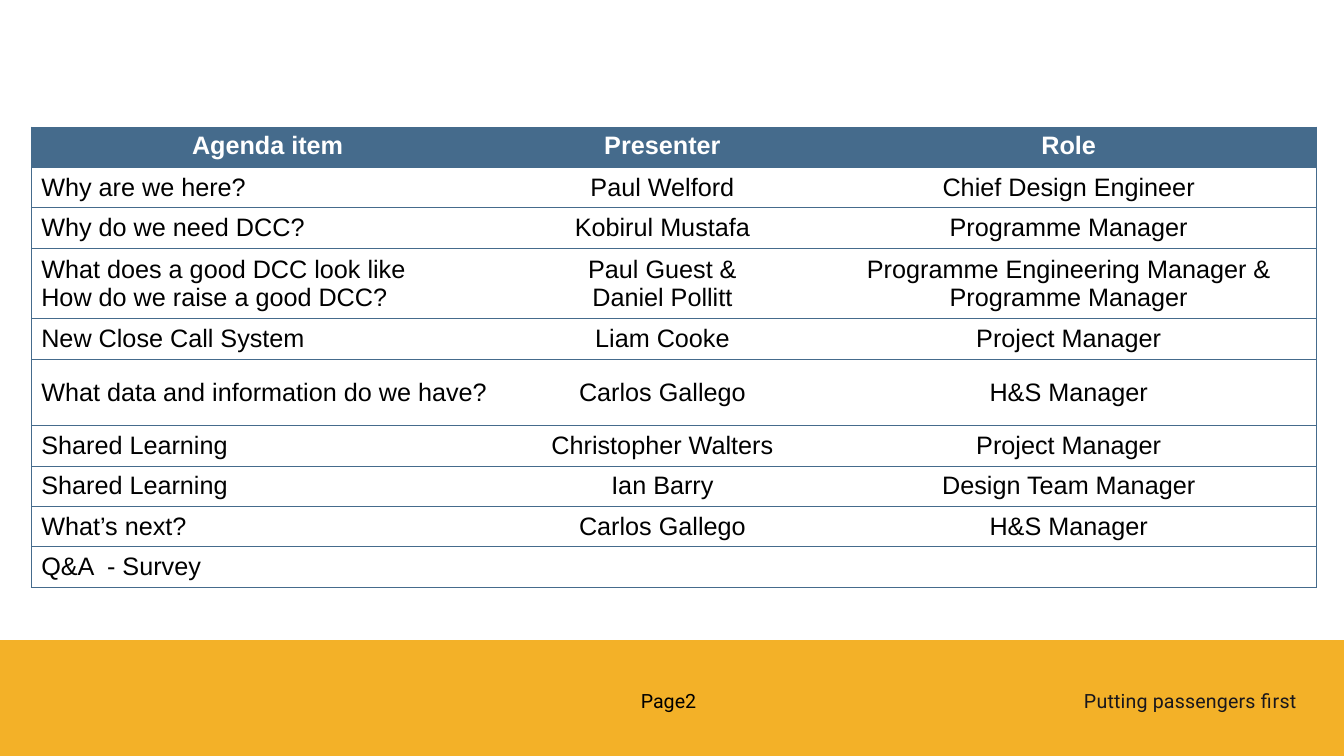
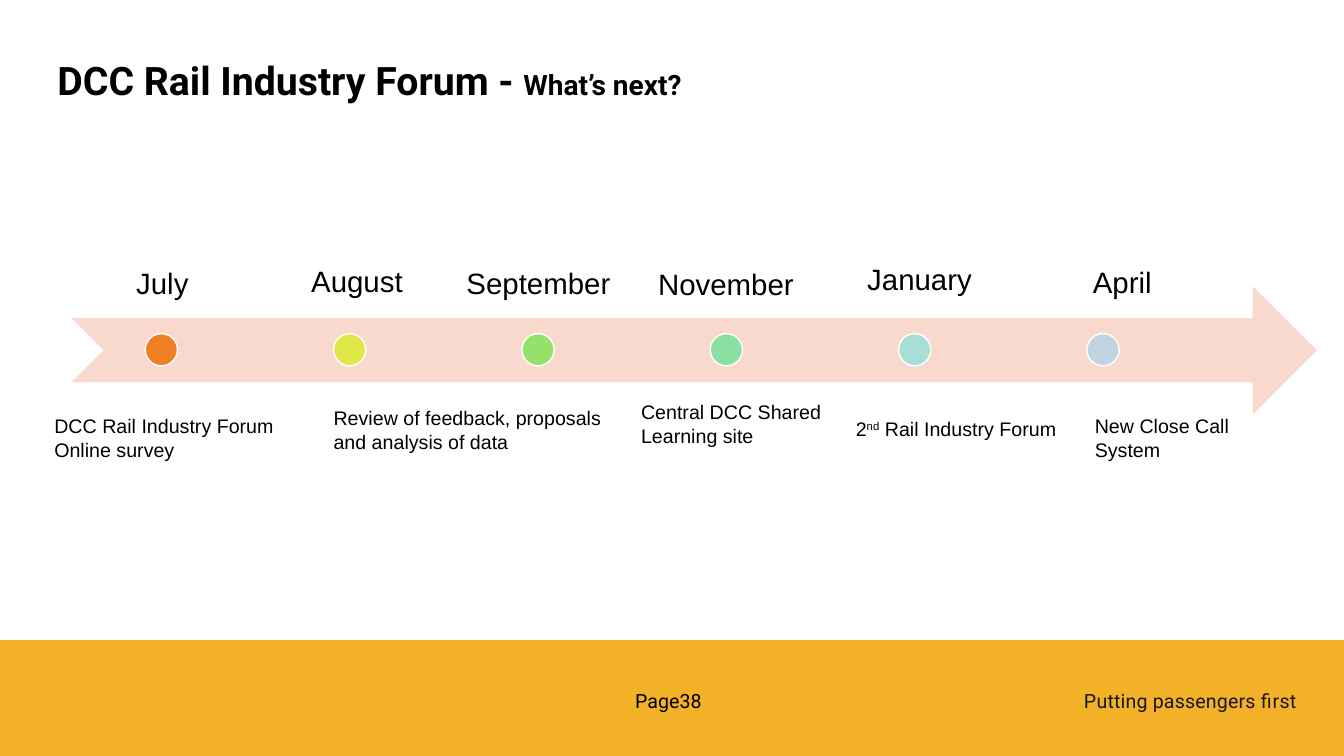
from dataclasses import dataclass

import lxml.etree
import pptx
import pptx.dml.color
import pptx.enum.shapes
import pptx.enum.text
import pptx.oxml.ns
import pptx.util

Inches = pptx.util.Inches
RGB = pptx.dml.color.RGBColor
Align = pptx.enum.text.PP_ALIGN
Anchor = pptx.enum.text.MSO_ANCHOR
Preset = pptx.enum.shapes.MSO_SHAPE

BLACK = RGB(0x00, 0x00, 0x00)
WHITE = RGB(0xFF, 0xFF, 0xFF)
INK = RGB(0x19, 0x17, 0x1C)
AMBER = RGB(0xF3, 0xB1, 0x28)
STEEL = RGB(0x45, 0x6B, 0x8C)
BLUSH = RGB(0xF9, 0xD8, 0xCD)


@dataclass
class Style:
    size: float
    name: str = "Arial"
    color: RGB = BLACK
    bold: bool = False
    align: Align = Align.LEFT
    anchor: Anchor = Anchor.TOP
    space: float = 1.0


@dataclass
class Month:
    name: str
    left: float
    top: float
    color: RGB


@dataclass
class Note:
    text: str
    left: float
    top: float
    width: float
    height: float = 0.57


PAGE = Style(14, "Roboto", align=Align.CENTER, anchor=Anchor.MIDDLE)
MOTTO = Style(14, "Roboto", INK, align=Align.RIGHT, anchor=Anchor.MIDDLE)
TITLE = Style(28, "Roboto", bold=True, space=0.9)
HEAD = Style(18, color=WHITE, bold=True, align=Align.CENTER)
ITEM = Style(18, anchor=Anchor.MIDDLE)
CELL = Style(18, align=Align.CENTER, anchor=Anchor.MIDDLE)
LABEL = Style(21, align=Align.CENTER, space=0.9)
NOTE = Style(14)

COLS = (4.69, 3.14, 4.92)
TALL = {3: 0.7, 5: 0.66}
AGENDA = [
    ("Agenda item", "Presenter", "Role"),
    ("Why are we here?", "Paul Welford", "Chief Design Engineer"),
    ("Why do we need DCC?", "Kobirul Mustafa", "Programme Manager"),
    ("What does a good DCC look like\nHow do we raise a good DCC?",
     "Paul Guest &\nDaniel Pollitt",
     "Programme Engineering Manager & Programme Manager"),
    ("New Close Call System", "Liam Cooke", "Project Manager"),
    ("What data and information do we have?", "Carlos Gallego", "H&S Manager"),
    ("Shared Learning", "Christopher Walters", "Project Manager"),
    ("Shared Learning", "Ian Barry", "Design Team Manager"),
    ("What’s next?", "Carlos Gallego", "H&S Manager"),
    ("Q&A  - Survey", "", ""),
]

MONTHS = [
    Month("July", 0.72, 2.51, RGB(0xF0, 0x7E, 0x23)),
    Month("August", 2.65, 2.49, RGB(0xDF, 0xE7, 0x49)),
    Month("September", 4.45, 2.51, RGB(0x95, 0xE1, 0x6C)),
    Month("November", 6.31, 2.52, RGB(0x8C, 0xDE, 0xA1)),
    Month("January", 8.23, 2.47, RGB(0xA9, 0xDE, 0xD7)),
    Month("April", 10.24, 2.5, RGB(0xC3, 0xD3, 0xE1)),
]
FIRST, LAST, DOT = 1.44, 10.78, 0.32

NOTES = [
    Note("DCC Rail Industry Forum\nOnline survey", 0.44, 4.06, 2.49),
    Note("Review of feedback, proposals and analysis of data", 3.21, 3.98, 3.18),
    Note("Central DCC Shared Learning site", 6.26, 3.92, 2.24),
    Note("New Close Call System", 10.76, 4.06, 1.81),
]
RALLY = Note("2", 8.39, 4.09, 2.24, 0.34)


def set_font(run, style: Style) -> None:
    font = run.font
    font.size = pptx.util.Pt(style.size)
    font.name = style.name
    font.bold = style.bold
    font.color.rgb = style.color


def set_text(frame, text: str, style: Style) -> None:
    frame.text = text
    for para in frame.paragraphs:
        para.alignment = style.align
        para.line_spacing = style.space
        for run in para.runs:
            set_font(run, style)


def add_text(slide, text: str, box: tuple, style: Style,
             pads: tuple = (0.1, 0.05, 0.1, 0.05)):
    frame = slide.shapes.add_textbox(*map(Inches, box)).text_frame
    frame.word_wrap = True
    frame.vertical_anchor = style.anchor
    (frame.margin_left, frame.margin_top,
     frame.margin_right, frame.margin_bottom) = map(Inches, pads)
    set_text(frame, text, style)
    return frame.paragraphs[0]


def add_run(para, text: str, style: Style):
    run = para.add_run()
    run.text = text
    set_font(run, style)
    return run


def add_form(slide, kind: Preset, box: tuple, color: RGB, edge: bool = False) -> None:
    shape = slide.shapes.add_shape(kind, *map(Inches, box))
    shape.shadow.inherit = False
    shape.fill.solid()
    shape.fill.fore_color.rgb = color
    if edge:
        shape.line.color.rgb = WHITE
        shape.line.width = pptx.util.Pt(1)
    else:
        shape.line.fill.background()


def add_edges(cell, sides: str) -> None:
    """Draw the named sides (L, R, T, B) and clear the others."""
    props = cell._tc.get_or_add_tcPr()
    qn = pptx.oxml.ns.qn
    for side in "LRTB":
        line = lxml.etree.SubElement(props, qn("a:ln" + side), w="6350")
        if side in sides:
            fill = lxml.etree.SubElement(line, qn("a:solidFill"))
            lxml.etree.SubElement(fill, qn("a:srgbClr"), val=str(STEEL))
        else:
            lxml.etree.SubElement(line, qn("a:noFill"))


def add_page(deck, num: int):
    slide = deck.slides.add_slide(deck.slide_layouts[6])
    add_form(slide, Preset.RECTANGLE, (0, 6.35, 13.33, 1.15), AMBER)
    pads = (0, 0.04, 0, 0.04)
    add_text(slide, f"Page{num}", (6.27, 6.79, 0.72, 0.32), PAGE, pads)
    motto = add_text(slide, "Putting passengers first",
                     (10.58, 6.79, 2.28, 0.32), MOTTO, pads)
    motto.runs[0].font._element.set("spc", "10")
    return slide


def draw_agenda(deck) -> None:
    slide = add_page(deck, 2)
    table = slide.shapes.add_table(
        len(AGENDA), len(COLS), Inches(0.31), Inches(1.26),
        Inches(sum(COLS)), Inches(4.56)).table
    table.first_row = table.horz_banding = False
    for col, width in enumerate(COLS):
        table.columns[col].width = Inches(width)
    for row, texts in enumerate(AGENDA):
        table.rows[row].height = Inches(TALL.get(row, 0.4))
        for col, text in enumerate(texts):
            cell = table.cell(row, col)
            style = HEAD if row == 0 else CELL if col else ITEM
            cell.vertical_anchor = style.anchor
            set_text(cell.text_frame, text, style)
            add_edges(cell, "TB" + ("L", "", "R")[col])
            if row:
                cell.fill.background()
            else:
                cell.fill.solid()
                cell.fill.fore_color.rgb = STEEL


def draw_plan(deck) -> None:
    slide = add_page(deck, 38)

    # Title
    title = add_text(slide, "DCC Rail Industry Forum - ",
                     (0.57, 0.56, 11.01, 0.67), TITLE, (0, 0.05, 0.1, 0.05))
    add_run(title, "What’s next?", Style(20, "Roboto", bold=True))

    # Timeline
    add_form(slide, Preset.NOTCHED_RIGHT_ARROW, (0.71, 2.84, 12.35, 1.27), BLUSH)
    step = (LAST - FIRST) / (len(MONTHS) - 1)
    for i, month in enumerate(MONTHS):
        add_text(slide, month.name, (month.left, month.top, 1.78, 1.27),
                 LABEL, (0.16,) * 4)
        add_form(slide, Preset.OVAL, (FIRST + i * step, 3.31, DOT, DOT),
                 month.color, edge=True)

    # Notes below the arrow
    for note in NOTES + [RALLY]:
        para = add_text(slide, note.text,
                        (note.left, note.top, note.width, note.height), NOTE)
        if note is RALLY:
            add_run(para, "nd", NOTE).font._element.set("baseline", "30000")
            add_run(para, " Rail Industry Forum", NOTE)


def main() -> None:
    deck = pptx.Presentation()
    deck.slide_width = Inches(13.33)
    deck.slide_height = Inches(7.5)
    draw_agenda(deck)
    draw_plan(deck)
    deck.save("out.pptx")


if __name__ == "__main__":
    main()
